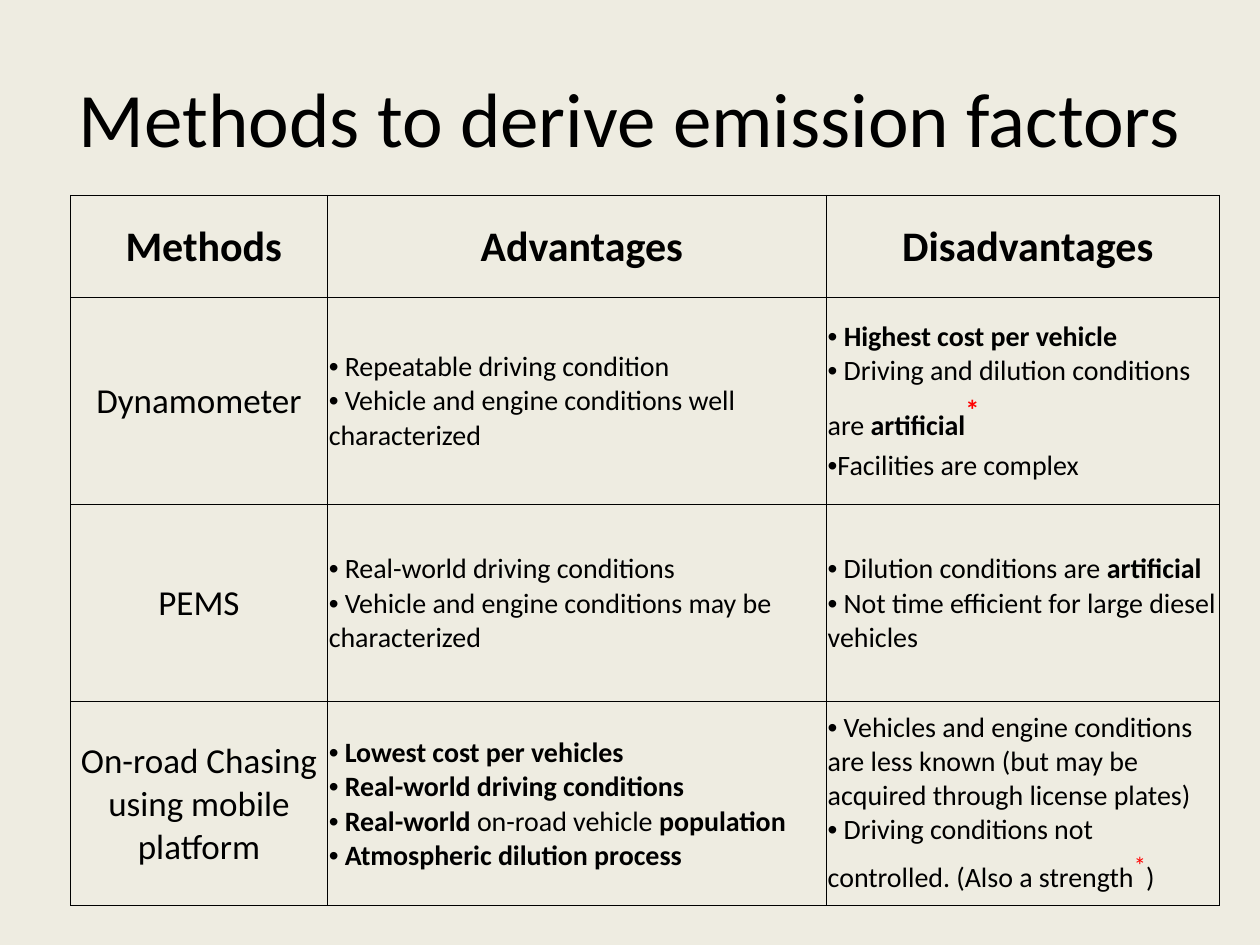
from pptx import Presentation
from pptx.dml.color import RGBColor
from pptx.enum.text import MSO_ANCHOR, PP_ALIGN
from pptx.oxml.ns import qn
from pptx.util import Inches, Pt
from lxml.etree import SubElement

FONT = "Calibri"
BLACK, RED, CREAM = "000000", "FF0000", "EEECE1"
COLUMN_WIDTHS = [2.04, 3.96, 3.12]
ROW_HEIGHTS = [0.81, 1.64, 1.57, 1.62]
HEADINGS = [" Methods", " Advantages", " Disadvantages"]
METHODS = [
    ("Dynamometer",
     [" Repeatable driving condition",
      " Vehicle and engine conditions well characterized"],
     [" |Highest cost per vehicle|",
      " Driving and dilution conditions are |artificial*|",
      "Facilities are complex"]),
    ("PEMS",
     [" Real-world driving conditions",
      " Vehicle and engine conditions may be characterized"],
     [" Dilution conditions are |artificial|",
      " Not time efficient for large diesel vehicles"]),
    ("On-road Chasing using mobile platform",
     [" |Lowest cost per vehicles|",
      " |Real-world driving conditions|",
      " |Real-world |on-road vehicle |population|",
      " |Atmospheric dilution process|"],
     [" Vehicles and engine conditions are less known "
      "(but may be acquired through license plates)",
      " Driving conditions not controlled. (Also a strength*)"]),
]


def color(value):
    return RGBColor.from_string(value)


def style_font(font, size, bold=False, fill=BLACK):
    font.name = FONT
    font.size = Pt(size)
    font.bold = bold
    font.color.rgb = color(fill)


def add_run(paragraph, text, size, bold, fill=BLACK):
    run = paragraph.add_run()
    run.text = text
    style_font(run.font, size, bold, fill)
    return run


def add_star(paragraph, bold):
    run = add_run(paragraph, "*", 28 if bold else 24, bold, RED)
    run._r.get_or_add_rPr().set("baseline", "30000")


def add_marked_text(paragraph, text):
    """Bars switch bold on and off; a star becomes a red superscript."""
    for index, part in enumerate(text.split("|")):
        bold = index % 2 == 1
        before, star, after = part.partition("*")
        if before:
            add_run(paragraph, before, 16, bold)
        if star:
            add_star(paragraph, bold)
        if after:
            add_run(paragraph, after, 16, bold)


def add_bullet(paragraph):
    properties = paragraph._p.get_or_add_pPr()
    properties.set("marL", "0")
    properties.set("indent", "0")
    SubElement(properties, qn("a:buFont"), typeface="Arial")
    SubElement(properties, qn("a:buChar"), char="•")


def format_cell(cell):
    cell.vertical_anchor = MSO_ANCHOR.MIDDLE
    cell.margin_left = cell.margin_right = cell.margin_top = Inches(0.01)
    cell.margin_bottom = 0
    properties = cell._tc.get_or_add_tcPr()
    for side in ("lnL", "lnR", "lnT", "lnB"):
        line = SubElement(properties, qn(f"a:{side}"), w=str(Pt(0.5)))
        fill = SubElement(line, qn("a:solidFill"))
        SubElement(fill, qn("a:srgbClr"), val=BLACK)
    cell.fill.background()


def fill_label(cell, text, size, bold=False):
    format_cell(cell)
    paragraph = cell.text_frame.paragraphs[0]
    paragraph.alignment = PP_ALIGN.CENTER
    add_run(paragraph, text, size, bold)


def fill_bullets(cell, items):
    format_cell(cell)
    frame = cell.text_frame
    for index, item in enumerate(items):
        paragraph = frame.add_paragraph() if index else frame.paragraphs[0]
        add_bullet(paragraph)
        add_marked_text(paragraph, item)


def set_title(slide, text):
    title = slide.shapes.title
    title.left, title.top = Inches(0.5), Inches(0.3)
    title.width, title.height = Inches(9), Inches(1.25)
    title.text_frame.text = text
    title.text_frame.vertical_anchor = MSO_ANCHOR.MIDDLE
    paragraph = title.text_frame.paragraphs[0]
    paragraph.alignment = PP_ALIGN.CENTER
    style_font(paragraph.font, 44)


def add_methods_table(slide):
    table = slide.shapes.add_table(
        len(ROW_HEIGHTS), len(COLUMN_WIDTHS), Inches(0.56), Inches(1.55),
        Inches(sum(COLUMN_WIDTHS)), Inches(sum(ROW_HEIGHTS))).table
    table.first_row = table.horz_banding = False
    for column, width in zip(table.columns, COLUMN_WIDTHS):
        column.width = Inches(width)
    for row, height in zip(table.rows, ROW_HEIGHTS):
        row.height = Inches(height)
    for index, heading in enumerate(HEADINGS):
        fill_label(table.cell(0, index), heading, 24, True)
    for index, (method, advantages, disadvantages) in enumerate(METHODS, 1):
        fill_label(table.cell(index, 0), method, 20)
        fill_bullets(table.cell(index, 1), advantages)
        fill_bullets(table.cell(index, 2), disadvantages)


def main():
    presentation = Presentation()
    presentation.slide_width = Inches(10)
    presentation.slide_height = Inches(7.5)
    slide = presentation.slides.add_slide(presentation.slide_layouts[5])
    slide.background.fill.solid()
    slide.background.fill.fore_color.rgb = color(CREAM)
    set_title(slide, "Methods to derive emission factors")
    add_methods_table(slide)
    presentation.save("out.pptx")


if __name__ == "__main__":
    main()
